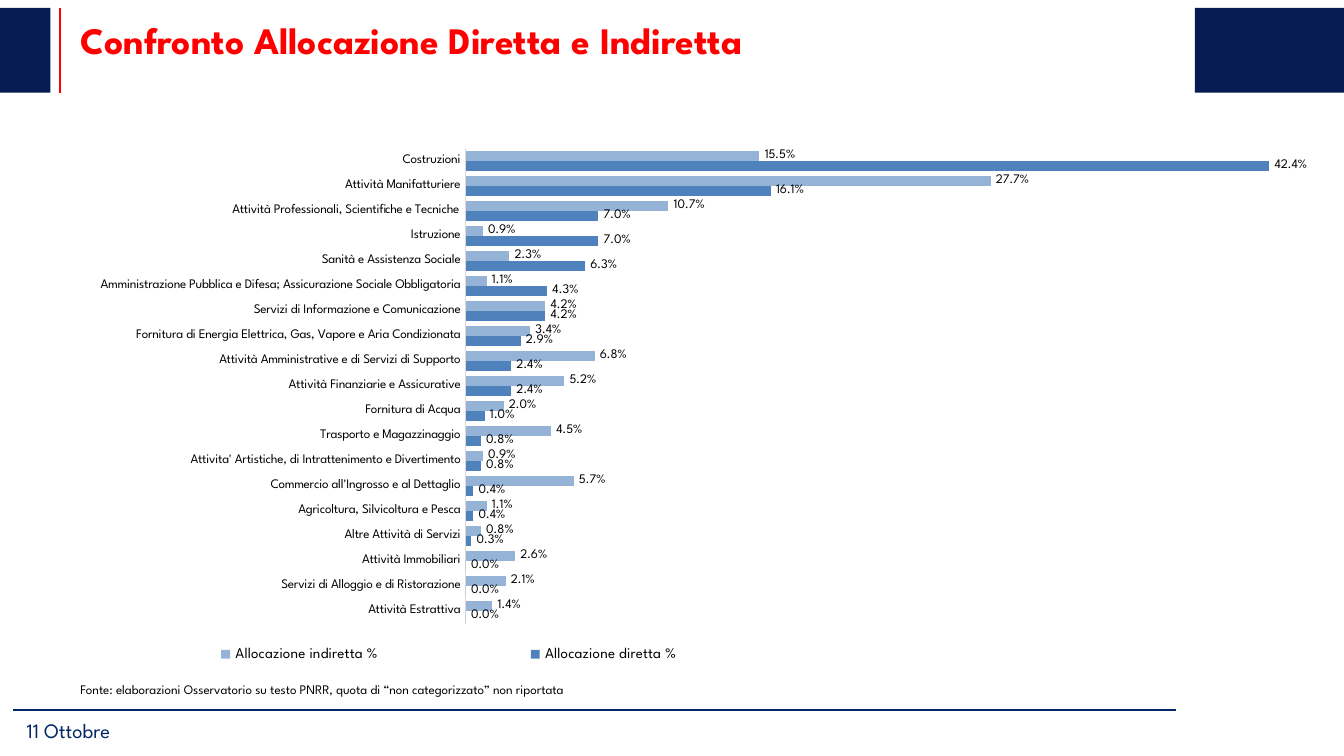
import pptx
import pptx.chart.data
import pptx.dml.color
import pptx.enum.chart
import pptx.enum.shapes
import pptx.enum.text
import pptx.oxml
import pptx.oxml.ns
import pptx.util

CELL = pptx.util.Inches(0.1)
COLUMNS, ROWS = 100, 56.25
FONT = "League Spartan"
COLORS = {
    "navy": "051B51",
    "red": "FF0000",
    "blue": "032764",
    "black": "000000",
    "axis": "D9D9D9",
    "direct": "4F81BD",
    "indirect": "95B3D7",
}
SECTORS = [
    ("Attività Estrattiva", 0, 0.014),
    ("Servizi di Alloggio e di Ristorazione", 0, 0.021),
    ("Attività Immobiliari", 0, 0.026),
    ("Altre Attività di Servizi", 0.003, 0.008),
    ("Agricoltura, Silvicoltura e Pesca", 0.004, 0.011),
    ("Commercio all'Ingrosso e al Dettaglio", 0.004, 0.057),
    ("Attivita' Artistiche, di Intrattenimento e Divertimento", 0.008, 0.009),
    ("Trasporto e Magazzinaggio", 0.008, 0.045),
    ("Fornitura di Acqua", 0.01, 0.02),
    ("Attività Finanziarie e Assicurative", 0.024, 0.052),
    ("Attività Amministrative e di Servizi di Supporto", 0.024, 0.068),
    ("Fornitura di Energia Elettrica, Gas, Vapore e Aria Condizionata", 0.029, 0.034),
    ("Servizi di Informazione e Comunicazione", 0.042, 0.042),
    ("Amministrazione Pubblica e Difesa; Assicurazione Sociale Obbligatoria", 0.043, 0.011),
    ("Sanità e Assistenza Sociale", 0.063, 0.023),
    ("Istruzione", 0.07, 0.009),
    ("Attività Professionali, Scientifiche e Tecniche", 0.07, 0.107),
    ("Attività Manifatturiere", 0.161, 0.277),
    ("Costruzioni", 0.424, 0.155),
]


def grid(*cells):
    """Turn columns and rows of the slide grid into lengths."""
    return [round(cell * CELL) for cell in cells]


def color(name):
    """Look up a named colour."""
    return pptx.dml.color.RGBColor.from_string(COLORS[name])


def set_values(target, values):
    """Set each attribute of the target from a dict."""
    for name, value in values.items():
        setattr(target, name, value)


def set_font(font, size, color_name="black", bold=False):
    """Give a font the slide's typeface, a size and a colour."""
    set_values(font, {"name": FONT, "size": pptx.util.Pt(size), "bold": bold})
    font.color.rgb = color(color_name)


def add_block(slide, *box):
    """Add a plain navy rectangle."""
    shape = slide.shapes.add_shape(pptx.enum.shapes.MSO_SHAPE.RECTANGLE, *grid(*box))
    shape.shadow.inherit = False
    shape.fill.solid()
    shape.fill.fore_color.rgb = color("navy")
    shape.line.fill.background()


def add_rule(slide, color_name, *ends):
    """Add a thin straight line."""
    line = slide.shapes.add_connector(pptx.enum.shapes.MSO_CONNECTOR.STRAIGHT, *grid(*ends))
    line.line.width = pptx.util.Pt(1)
    line.line.fill.solid()
    line.line.fill.fore_color.rgb = color(color_name)
    properties = line._element.spPr
    properties.append(pptx.oxml.parse_xml(f"<a:effectLst {pptx.oxml.ns.nsdecls('a')}/>"))


def add_text(slide, text, box, **font_format):
    """Add a wrapped one-paragraph text box."""
    frame = slide.shapes.add_textbox(*grid(*box)).text_frame
    set_values(frame, {"word_wrap": True, "vertical_anchor": pptx.enum.text.MSO_ANCHOR.TOP})
    paragraph = frame.paragraphs[0]
    paragraph.text = text
    set_font(paragraph.runs[0].font, **font_format)


def set_layout(element, index, target, **shares):
    """Place a chart part by shares of the chart's size."""
    for layout in element.findall(pptx.oxml.ns.qn("c:layout")):
        element.remove(layout)
    modes = {"xMode": "edge", "yMode": "edge"}
    if target:
        modes = {"layoutTarget": target, **modes}
    parts = "".join(f'<c:{name} val="{value}"/>' for name, value in {**modes, **shares}.items())
    element.insert(index, pptx.oxml.parse_xml(
        f"<c:layout {pptx.oxml.ns.nsdecls('c')}><c:manualLayout>{parts}</c:manualLayout></c:layout>"
    ))


def style_axes(chart):
    """Show a bare category axis and hide the value axis."""
    none = pptx.enum.chart.XL_TICK_MARK.NONE
    set_values(chart.category_axis, {
        "major_tick_mark": none, "minor_tick_mark": none, "has_major_gridlines": False,
    })
    set_font(chart.category_axis.tick_labels.font, 7)
    line = chart.category_axis.format.line
    line.width = pptx.util.Pt(0.75)
    line.color.rgb = color("axis")
    set_values(chart.value_axis, {
        "visible": False, "has_major_gridlines": False,
        "minimum_scale": 0, "maximum_scale": 0.45,
    })


def style_series(series, color_name):
    """Colour one series and label its bars."""
    series.format.fill.solid()
    series.format.fill.fore_color.rgb = color(color_name)
    labels = series.data_labels
    set_values(labels, {
        "show_value": True, "number_format": "0.0%", "number_format_is_linked": False,
        "position": pptx.enum.chart.XL_LABEL_POSITION.OUTSIDE_END,
    })
    set_font(labels.font, 7)


def add_allocation_chart(slide, *box):
    """Add the clustered bars of direct and indirect allocation."""
    sectors, direct, indirect = zip(*SECTORS)
    data = pptx.chart.data.CategoryChartData(number_format="0.0%")
    data.categories = sectors
    data.add_series("Allocazione diretta %", direct)
    data.add_series("Allocazione indiretta %", indirect)
    chart = slide.shapes.add_chart(
        pptx.enum.chart.XL_CHART_TYPE.BAR_CLUSTERED, *grid(*box), data
    ).chart
    set_values(chart, {"has_title": False, "has_legend": True})
    set_font(chart.font, 7)
    set_values(chart.plots[0], {"gap_width": 50, "overlap": 0, "vary_by_categories": False})
    style_axes(chart)
    for series, color_name in zip(chart.plots[0].series, ("direct", "indirect")):
        style_series(series, color_name)
    set_values(chart.legend, {
        "position": pptx.enum.chart.XL_LEGEND_POSITION.BOTTOM, "include_in_layout": False,
    })
    set_font(chart.legend.font, 8)
    plot_area = chart._chartSpace.chart.plotArea
    set_layout(plot_area, 0, "inner", x=0.465, y=0.091, w=0.511, h=0.821)
    set_layout(chart.legend._element, 1, None, x=0.23, y=0.93, w=0.45, h=0.07)


def main():
    """Build and save the slide."""
    presentation = pptx.Presentation()
    width, height = grid(COLUMNS, ROWS)
    set_values(presentation, {"slide_width": width, "slide_height": height})
    slide = presentation.slides.add_slide(presentation.slide_layouts[6])
    add_block(slide, 88.9, 0.6, COLUMNS - 88.9, 6.3)
    add_rule(slide, "red", 4.45, 0.6, 4.45, 6.9)
    add_block(slide, 0, 0.6, 3.75, 6.3)
    add_text(slide, "Confronto Allocazione Diretta e Indiretta", (5, 0.8, 80.8, 6),
             size=20, color_name="red", bold=True)
    add_rule(slide, "blue", 87.5, 52.85, 1, 52.85)
    add_text(slide, "11 Ottobre", (1, 52.9, 87.8, 3.35), size=11, color_name="blue")
    add_text(slide, "Fonte: elaborazioni Osservatorio su testo PNRR, quota di “non categorizzato” non riportata",
             (5, 50.2, 85.8, 2.2), size=7)
    add_allocation_chart(slide, -23.1, 7.1, 124.2, 43.1)
    presentation.save("out.pptx")


if __name__ == "__main__":
    main()
